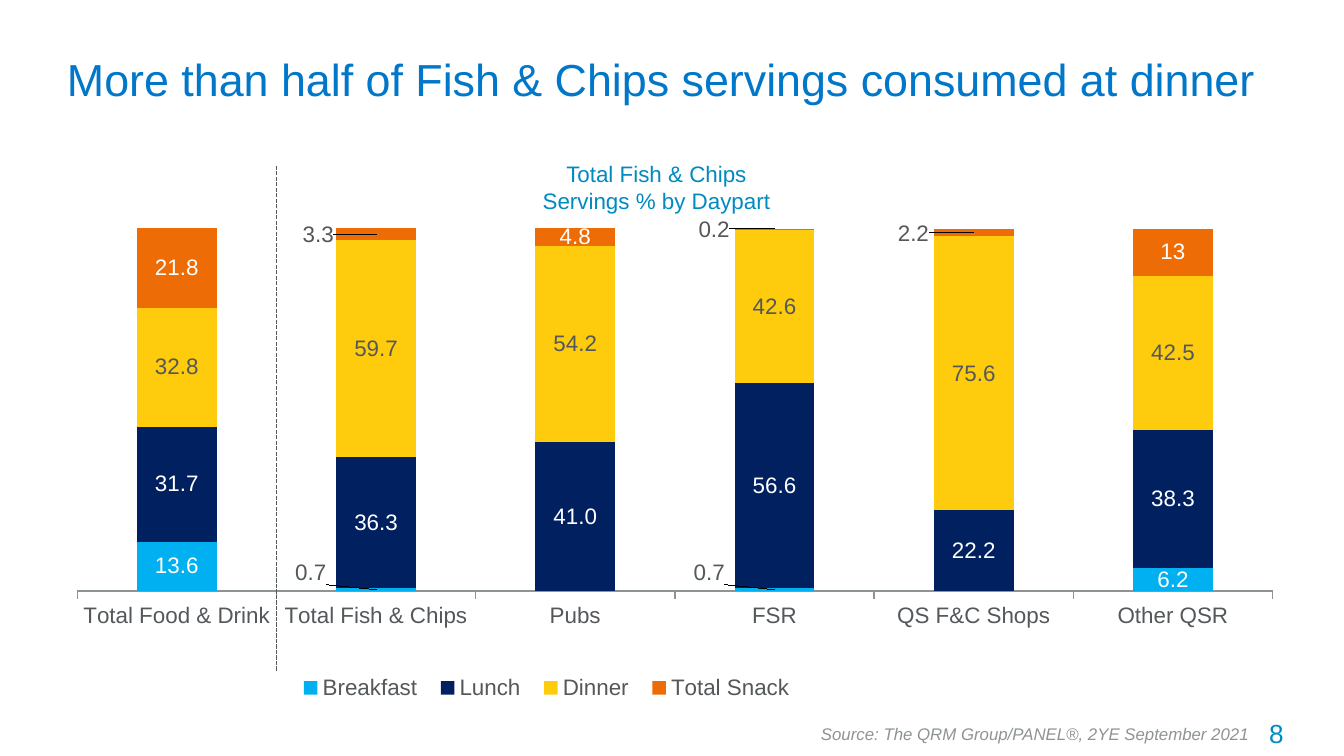
import pptx
import pptx.util
import pptx.chart.data
import pptx.dml.color
import pptx.enum.chart
import pptx.enum.dml
import pptx.enum.shapes
import pptx.enum.text
import pptx.oxml
import pptx.oxml.ns

# Content
HEADLINE = "More than half of Fish & Chips servings consumed at dinner"
CAPTION = ["Total Fish & Chips", "Servings % by Daypart"]
SOURCE = "Source: The QRM Group/PANEL®, 2YE September 2021"
PAGE = "8"
VENUES = ["Total Food & Drink", "Total Fish & Chips", "Pubs", "FSR",
          "QS F&C Shops", "Other QSR"]
# moved: venue index -> label offset in percent of the chart; hidden: venue indexes
DAYPARTS = [
    dict(name="Breakfast", values=[13.6, 0.7, 0, 0.7, 0, 6.2], format="#,##0.0",
         label="white", moved={1: (-5.3, -3.2), 3: (-5.3, -3.2)}, hidden=[2, 4]),
    dict(name="Lunch", values=[31.7, 36.3, 41, 56.6, 22.2, 38.3], format="#,##0.0",
         label="white"),
    dict(name="Dinner", values=[32.8, 59.7, 54.2, 42.6, 75.6, 42.5], format="General",
         label="grey"),
    dict(name="Total Snack", values=[21.8, 3.3, 4.8, 0.2, 2.2, 13], format="General",
         label="white", moved={1: (-4.7, 0), 3: (-4.9, 0.2), 4: (-4.9, 0.2)}),
]

THEME = dict(
    font="Arial",
    size=dict(headline=24, page=14, body=12, source=9),
    color=dict(headline="0077C8", accent="008AC0", grey="54585A", source="8E9396",
               white="FFFFFF", axis="8E9396", Breakfast="00B0F0", Lunch="002060",
               Dinner="FECC0C", **{"Total Snack": "ED6C05"}),
)

# Places in percent of the slide: left, top, width, height
WIDTH = 10
HEIGHT = WIDTH * 9 / 16
HEADLINE_AREA = (4, 4.1, 94.3, 12.6)
CAPTION_AREA = (39.3, 20.3, 19.1, 9.1)
CHART_AREA = (4, 23.8, 91.7, 70)
SOURCE_AREA = (60.1, 94.8, 34.1, 4.4)
PAGE_AREA = (88.5, 94, 8, 6)
DIVIDER_TOP, DIVIDER_BOTTOM = 21.9, 88.7
# Places in percent of the chart
PLOT = (1.9, 9.2, 97, 68.5)
LEGEND = (19, 93, 42, 6)


def place(area):
    return [pptx.util.Inches(percent / 100 * side)
            for percent, side in zip(area, (WIDTH, HEIGHT) * 2)]


def color(name):
    return pptx.dml.color.RGBColor.from_string(THEME["color"][name])


def style(font, size, color_name):
    font.name = THEME["font"]
    font.size = pptx.util.Pt(THEME["size"][size])
    font.color.rgb = color(color_name)


def add_text(slide, lines, area, size, color_name, align="LEFT", wrap=True,
             anchor="TOP", italic=False):
    frame = slide.shapes.add_textbox(*place(area)).text_frame
    frame.word_wrap = wrap
    frame.vertical_anchor = getattr(pptx.enum.text.MSO_ANCHOR, anchor)
    frame.text = "\n".join(lines)
    for line in frame.paragraphs:
        line.alignment = getattr(pptx.enum.text.PP_ALIGN, align)
        line.font.italic = italic
        style(line.font, size, color_name)


def chart_xml(body):
    return pptx.oxml.parse_xml(body.replace(">", f' {pptx.oxml.ns.nsdecls("c")}>', 1))


def layout(area, inner=False, offset=False):
    parts = ['<c:layoutTarget val="inner"/>'] if inner else []
    if not offset:
        parts += ['<c:xMode val="edge"/>', '<c:yMode val="edge"/>']
    parts += [f'<c:{key} val="{percent / 100}"/>' for key, percent in zip("xywh", area)]
    return chart_xml(f'<c:layout><c:manualLayout>{"".join(parts)}'
                     '</c:manualLayout></c:layout>')


def set_layout(element, new_layout, after=None):
    for old in element.xpath("c:layout"):
        element.remove(old)
    if after is None:
        element.insert(0, new_layout)
    else:
        element.xpath(after)[0].addnext(new_layout)


def label_daypart(series, daypart):
    labels = series.data_labels
    labels.show_value = True
    labels.number_format = daypart["format"]
    labels.number_format_is_linked = False
    style(labels.font, "body", daypart["label"])
    moved, hidden = daypart.get("moved", {}), daypart.get("hidden", [])
    for venue in [*moved, *hidden]:
        style(series.points[venue].data_label.font, "body", "grey")
        label = series._element.xpath(f'c:dLbls/c:dLbl[c:idx/@val="{venue}"]')[0]
        if venue in moved:
            set_layout(label, layout(moved[venue], offset=True), "c:idx")
        else:
            for part in list(label)[1:]:
                label.remove(part)
            label.append(chart_xml('<c:delete val="1"></c:delete>'))
    # No leader lines from moved labels to their bars
    series._element.xpath("c:dLbls")[0].append(chart_xml(
        '<c:extLst><c:ext uri="{CE6537A1-D6FC-4f65-9D91-7224C49458BB}" '
        'xmlns:c15="http://schemas.microsoft.com/office/drawing/2012/chart">'
        '<c15:showLeaderLines val="0"/></c:ext></c:extLst>'))


def add_daypart_chart(slide):
    data = pptx.chart.data.CategoryChartData()
    data.categories = VENUES
    for daypart in DAYPARTS:
        data.add_series(daypart["name"], daypart["values"])
    kind = pptx.enum.chart.XL_CHART_TYPE.COLUMN_STACKED_100
    chart = slide.shapes.add_chart(kind, *place(CHART_AREA), data).chart
    chart.has_title = False
    style(chart.font, "body", "grey")

    bars = chart.plots[0]
    bars.gap_width, bars.overlap = 150, 100
    for series, daypart in zip(bars.series, DAYPARTS):
        series.format.fill.solid()
        series.format.fill.fore_color.rgb = color(daypart["name"])
        label_daypart(series, daypart)

    chart.value_axis.visible = False
    chart.value_axis.has_major_gridlines = False
    venues = chart.category_axis
    venues.major_tick_mark = pptx.enum.chart.XL_TICK_MARK.OUTSIDE
    venues.format.line.color.rgb = color("axis")
    venues.format.line.width = pptx.util.Pt(0.75)

    chart.has_legend = True
    chart.legend.position = pptx.enum.chart.XL_LEGEND_POSITION.BOTTOM
    chart.legend.include_in_layout = False
    style(chart.legend.font, "body", "grey")
    set_layout(chart.legend._element, layout(LEGEND), "c:legendPos")
    set_layout(chart._chartSpace.xpath("c:chart/c:plotArea")[0],
               layout(PLOT, inner=True))


def add_divider(slide):
    # Falls between the first and the second venue
    x = CHART_AREA[0] + CHART_AREA[2] * (PLOT[0] + PLOT[2] / len(VENUES)) / 100
    divider = slide.shapes.add_connector(
        pptx.enum.shapes.MSO_CONNECTOR.STRAIGHT,
        *place((x, DIVIDER_BOTTOM, x, DIVIDER_TOP)))
    divider.line.color.rgb = color("grey")
    divider.line.width = pptx.util.Pt(0.75)
    divider.line.dash_style = pptx.enum.dml.MSO_LINE.SQUARE_DOT
    divider._element.spPr.append(pptx.oxml.parse_xml(
        f'<a:effectLst {pptx.oxml.ns.nsdecls("a")}/>'))


def main():
    deck = pptx.Presentation()
    deck.slide_width, deck.slide_height = place((100, 100))
    slide = deck.slides.add_slide(deck.slide_layouts[6])
    add_daypart_chart(slide)
    add_divider(slide)
    add_text(slide, [HEADLINE], HEADLINE_AREA, "headline", "headline", anchor="MIDDLE")
    add_text(slide, CAPTION, CAPTION_AREA, "body", "accent", align="CENTER", wrap=False)
    add_text(slide, [SOURCE], SOURCE_AREA, "source", "source", wrap=False, italic=True)
    add_text(slide, [PAGE], PAGE_AREA, "page", "accent", align="RIGHT")
    deck.save("out.pptx")


if __name__ == "__main__":
    main()
